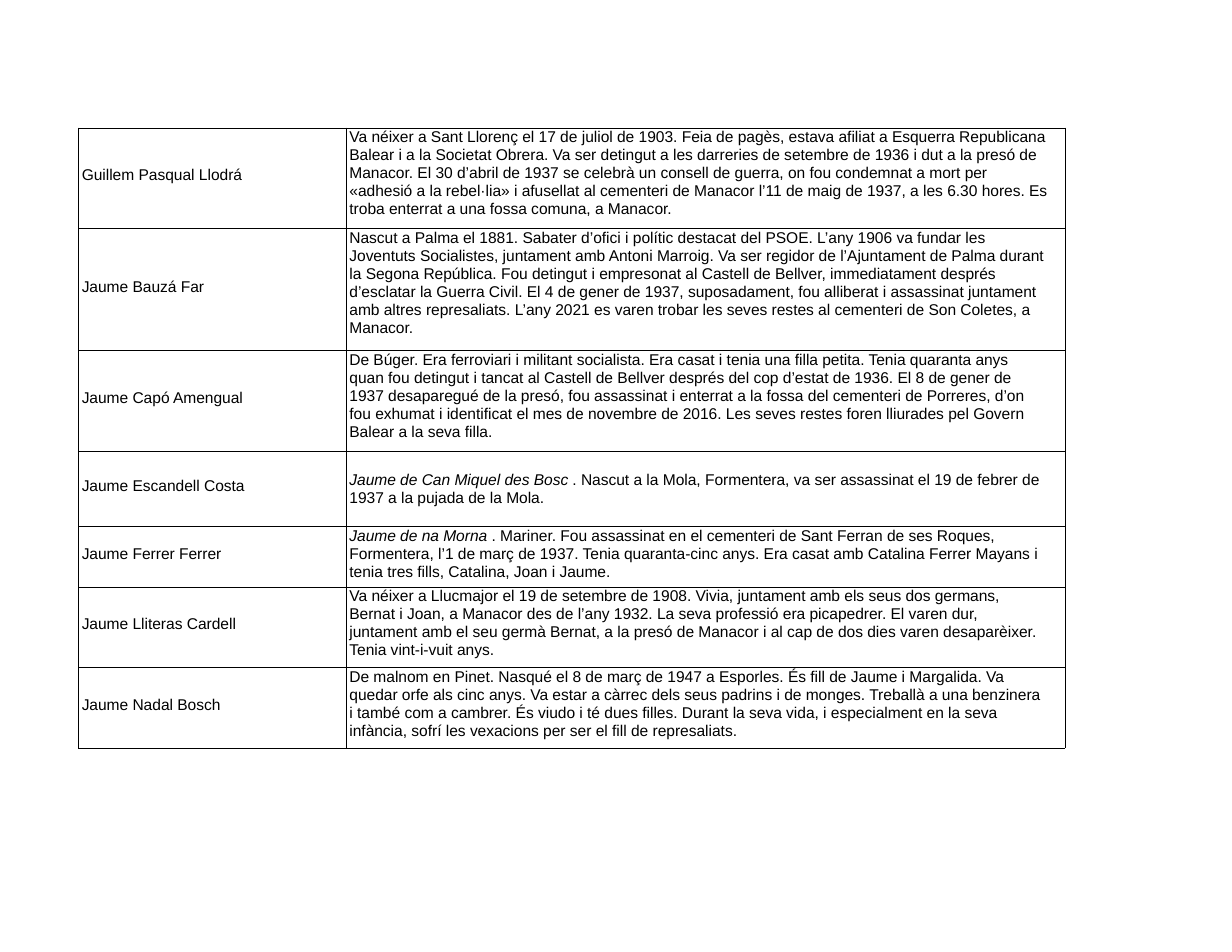
"""Build a one-slide table of biographies of victims of Francoist repression."""
from dataclasses import dataclass

from lxml import etree
from pptx import Presentation
from pptx.dml.color import RGBColor
from pptx.enum.text import MSO_ANCHOR
from pptx.oxml.ns import qn
from pptx.table import _Cell
from pptx.text.text import _Paragraph
from pptx.util import Inches, Pt

BLACK = RGBColor(0x00, 0x00, 0x00)
MIDDLE = MSO_ANCHOR.MIDDLE
TOP = MSO_ANCHOR.TOP
FONT = "Arial"
TEXT_SIZE = Pt(10)
BORDER_WIDTH = Pt(0.25)
BORDER_SIDES = ("a:lnL", "a:lnR", "a:lnT", "a:lnB")
COLUMN_WIDTHS = (2.39, 6.42)
TABLE_LEFT, TABLE_TOP = 0.7, 1.14
BLANK_LAYOUT = 6


@dataclass(frozen=True)
class Biography:
    name: str
    height: float
    paragraphs: tuple[str, ...]
    nickname: str = ""
    anchor: MSO_ANCHOR = TOP


BIOGRAPHIES = (
    Biography("Guillem Pasqual Llodrá", 0.9, (
        """Va néixer a Sant Llorenç el 17 de juliol de 1903. Feia de pagès, estava afiliat a Esquerra Republicana
Balear i a la Societat Obrera. Va ser detingut a les darreries de setembre de 1936 i dut a la presó de
Manacor. El 30 d’abril de 1937 se celebrà un consell de guerra, on fou condemnat a mort per""",
        """«adhesió a la rebel·lia» i afusellat al cementeri de Manacor l’11 de maig de 1937, a les 6.30 hores. Es
troba enterrat a una fossa comuna, a Manacor.""",
    )),
    Biography("Jaume Bauzá Far", 1.09, (
        """Nascut a Palma el 1881. Sabater d’ofici i polític destacat del PSOE. L’any 1906 va fundar les
Joventuts Socialistes, juntament amb Antoni Marroig. Va ser regidor de l’Ajuntament de Palma durant
la Segona República. Fou detingut i empresonat al Castell de Bellver, immediatament després
d’esclatar la Guerra Civil. El 4 de gener de 1937, suposadament, fou alliberat i assassinat juntament
amb altres represaliats. L’any 2021 es varen trobar les seves restes al cementeri de Son Coletes, a
Manacor.""",
    )),
    Biography("Jaume Capó Amengual", 0.9, (
        """De Búger. Era ferroviari i militant socialista. Era casat i tenia una filla petita. Tenia quaranta anys
quan fou detingut i tancat al Castell de Bellver després del cop d’estat de 1936. El 8 de gener de
1937 desaparegué de la presó, fou assassinat i enterrat a la fossa del cementeri de Porreres, d’on
fou exhumat i identificat el mes de novembre de 2016. Les seves restes foren lliurades pel Govern
Balear a la seva filla.""",
    )),
    Biography("Jaume Escandell Costa", 0.67, (
        """. Nascut a la Mola, Formentera, va ser assassinat el 19 de febrer de
1937 a la pujada de la Mola.""",
    ), "Jaume de Can Miquel des Bosc ", MIDDLE),
    Biography("Jaume Ferrer Ferrer", 0.54, (
        """. Mariner. Fou assassinat en el cementeri de Sant Ferran de ses Roques,
Formentera, l’1 de març de 1937. Tenia quaranta-cinc anys. Era casat amb Catalina Ferrer Mayans i
tenia tres fills, Catalina, Joan i Jaume.""",
    ), "Jaume de na Morna "),
    Biography("Jaume Lliteras Cardell", 0.72, (
        """Va néixer a Llucmajor el 19 de setembre de 1908. Vivia, juntament amb els seus dos germans,
Bernat i Joan, a Manacor des de l’any 1932. La seva professió era picapedrer. El varen dur,
juntament amb el seu germà Bernat, a la presó de Manacor i al cap de dos dies varen desaparèixer.
Tenia vint-i-vuit anys.""",
    )),
    Biography("Jaume Nadal Bosch", 0.72, (
        """De malnom en Pinet. Nasqué el 8 de març de 1947 a Esporles. És fill de Jaume i Margalida. Va
quedar orfe als cinc anys. Va estar a càrrec dels seus padrins i de monges. Treballà a una benzinera
i també com a cambrer. És viudo i té dues filles. Durant la seva vida, i especialment en la seva
infància, sofrí les vexacions per ser el fill de represaliats.""",
    )),
)


def add_text(paragraph: _Paragraph, text: str, italic: bool = False) -> None:
    run = paragraph.add_run()
    run.text = text
    run.font.name = FONT
    run.font.size = TEXT_SIZE
    run.font.italic = italic
    run.font.color.rgb = BLACK


def add_lines(paragraph: _Paragraph, text: str) -> None:
    for index, line in enumerate(text.splitlines()):
        if index:
            paragraph.add_line_break()
        add_text(paragraph, line)
    for line_break in paragraph._p.findall(qn("a:br")):
        etree.SubElement(line_break, qn("a:rPr"), sz=str(int(TEXT_SIZE.pt * 100)))


def format_cell(cell: _Cell, anchor: MSO_ANCHOR, bottom: float) -> None:
    cell.margin_left = Inches(0.03)
    cell.margin_right = cell.margin_top = 0
    cell.margin_bottom = Inches(bottom)
    cell.vertical_anchor = anchor
    properties = cell._tc.get_or_add_tcPr()
    for side in BORDER_SIDES:
        border = etree.SubElement(properties, qn(side), w=str(BORDER_WIDTH))
        solid = etree.SubElement(border, qn("a:solidFill"))
        etree.SubElement(solid, qn("a:srgbClr"), val=str(BLACK))
    cell.fill.background()


def fill_name(cell: _Cell, name: str) -> None:
    format_cell(cell, MIDDLE, 0.05)
    add_text(cell.text_frame.paragraphs[0], name)


def fill_story(cell: _Cell, biography: Biography) -> None:
    format_cell(cell, biography.anchor, 0)
    frame = cell.text_frame
    for index, story in enumerate(biography.paragraphs):
        paragraph = frame.add_paragraph() if index else frame.paragraphs[0]
        paragraph.line_spacing = 1.04
        paragraph.space_before = Pt(0 if index else 0.6)
        if biography.nickname and not index:
            add_text(paragraph, biography.nickname, italic=True)
        add_lines(paragraph, story)


def main() -> None:
    presentation = Presentation()
    presentation.slide_width, presentation.slide_height = Inches(11), Inches(8.5)
    slide = presentation.slides.add_slide(presentation.slide_layouts[BLANK_LAYOUT])
    register = slide.shapes.add_table(
        len(BIOGRAPHIES), len(COLUMN_WIDTHS), Inches(TABLE_LEFT), Inches(TABLE_TOP),
        Inches(sum(COLUMN_WIDTHS)), Inches(sum(person.height for person in BIOGRAPHIES)),
    ).table
    register.first_row = register.horz_banding = False
    for column, width in zip(register.columns, COLUMN_WIDTHS):
        column.width = Inches(width)
    for row, biography in zip(register.rows, BIOGRAPHIES):
        row.height = Inches(biography.height)
        name_cell, story_cell = row.cells
        fill_name(name_cell, biography.name)
        fill_story(story_cell, biography)
    presentation.save("out.pptx")


if __name__ == "__main__":
    main()
